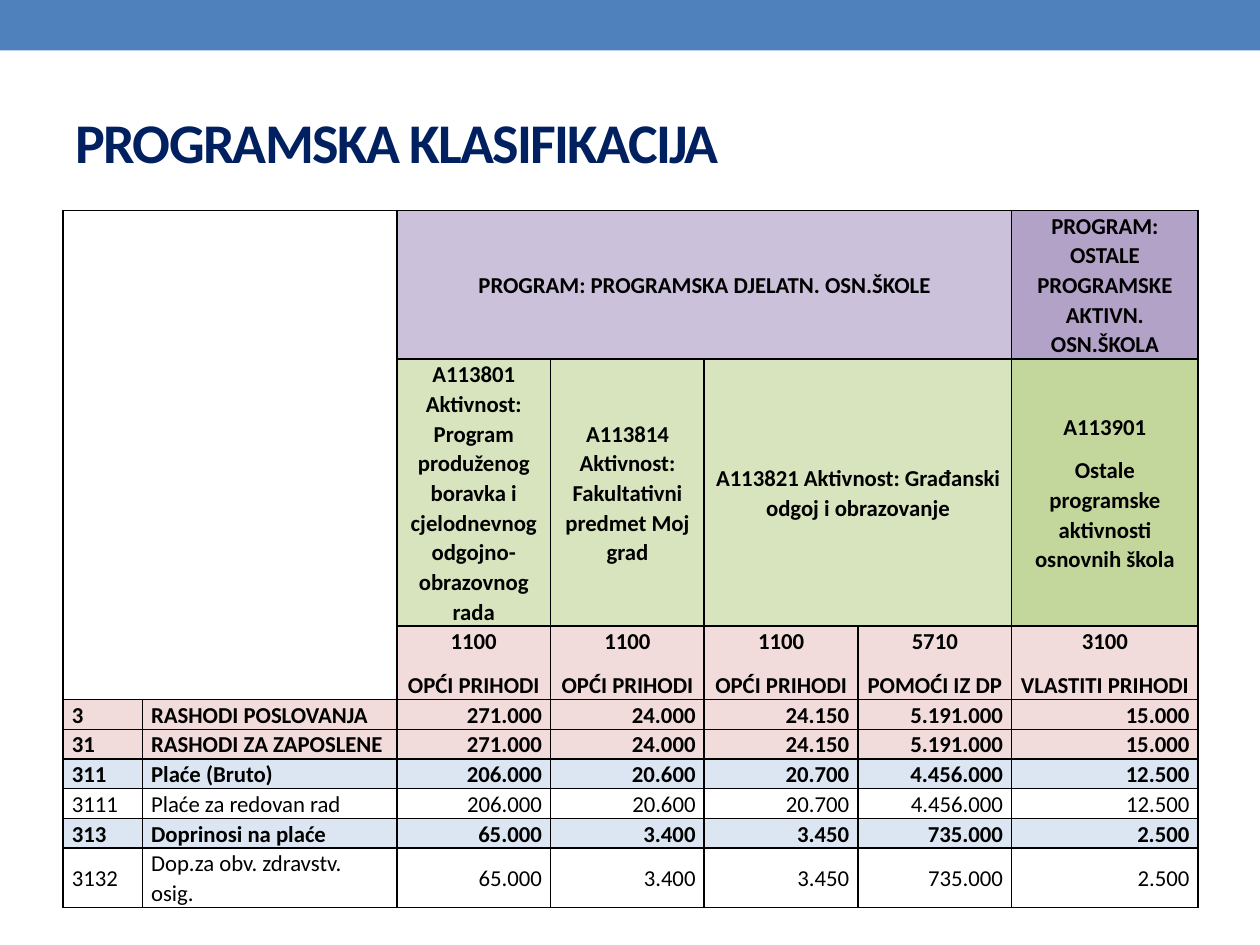
"""Build the slide with the programme classification table."""
from lxml.etree import SubElement
from pptx import Presentation
from pptx.dml.color import RGBColor
from pptx.enum.shapes import MSO_SHAPE as Shape
from pptx.enum.text import MSO_ANCHOR as Anchor, PP_ALIGN as Align
from pptx.oxml.ns import qn
from pptx.util import Inches, Pt

TITLE = "PROGRAMSKA KLASIFIKACIJA"
WIDTHS = [0.63, 2.02, 1.22, 1.22, 1.22, 1.22, 1.48]
HEIGHTS = [1.18, 2.12, 0.58] + [0.23] * 5 + [0.47]
PINK, BLUE, WHITE, GREEN = "F2DCDB", "DCE6F2", "FFFFFF", "D7E4BD"
FUNDS = "OPĆI PRIHODI"

# (column, columns spanned, fill, text)
HEADS = [
    [(2, 4, "CCC1DA", "PROGRAM: PROGRAMSKA DJELATN. OSN.ŠKOLE"),
     (6, 1, "B3A2C7", "PROGRAM: OSTALE PROGRAMSKE AKTIVN. OSN.ŠKOLA")],
    [(2, 1, GREEN, "A113801 Aktivnost: Program produženog boravka i "
                   "cjelodnevnog odgojno-obrazovnog rada"),
     (3, 1, GREEN, "A113814 Aktivnost: Fakultativni predmet Moj grad"),
     (4, 2, GREEN, "A113821 Aktivnost: Građanski odgoj i obrazovanje"),
     (6, 1, "C3D69B", "A113901\nOstale programske aktivnosti osnovnih škola")],
    [(2, 1, PINK, f"1100\n{FUNDS}"),
     (3, 1, PINK, f"1100\n{FUNDS}"),
     (4, 1, PINK, f"1100\n{FUNDS}"),
     (5, 1, PINK, "5710\nPOMOĆI IZ DP"),
     (6, 1, PINK, "3100\nVLASTITI PRIHODI")],
]
ROWS = [
    ("3", "RASHODI POSLOVANJA", "271.000", "24.000", "24.150", "5.191.000", "15.000"),
    ("31", "RASHODI ZA ZAPOSLENE", "271.000", "24.000", "24.150", "5.191.000", "15.000"),
    ("311", "Plaće (Bruto)", "206.000", "20.600", "20.700", "4.456.000", "12.500"),
    ("3111", "Plaće za redovan rad", "206.000", "20.600", "20.700", "4.456.000", "12.500"),
    ("313", "Doprinosi na plaće", "65.000", "3.400", "3.450", "735.000", "2.500"),
    ("3132", "Dop.za obv. zdravstv. osig.", "65.000", "3.400", "3.450", "735.000", "2.500"),
]
LEVELS = {1: PINK, 2: PINK, 3: BLUE, 4: WHITE}


def paint(fill, color):
    """Give a fill or a font one solid colour."""
    fill.solid()
    fill.fore_color.rgb = RGBColor.from_string(color)


def write(frame, text, size=13, color="000000", bold=True, align=Align.LEFT,
          line=None, after=None, track=None):
    """Put text in a frame, one paragraph for each line."""
    frame.text = text
    for para in frame.paragraphs:
        para.alignment = align
        para.line_spacing = line
        para.space_after = after
        for run in para.runs:
            font = run.font
            font.name, font.size, font.bold = "Calibri", Pt(size), bold
            paint(font.fill, color)
            if track is not None:
                font._element.set("spc", str(track * 100))


def edge(cell, sides):
    """Draw black lines on the named sides and none on the rest."""
    props = cell._tc.get_or_add_tcPr()
    for side in "LRTB":
        line = SubElement(props, qn(f"a:ln{side}"), w=str(Pt(1)))
        if side in sides:
            fill = SubElement(line, qn("a:solidFill"))
            SubElement(fill, qn("a:srgbClr"), val="000000")
        else:
            SubElement(line, qn("a:noFill"))


def fill_cell(cell, text, color, **form):
    """Write one table cell on its colour."""
    cell.margin_left = cell.margin_right = Inches(0.07)
    cell.margin_top = cell.margin_bottom = 0
    cell.vertical_anchor = Anchor.MIDDLE
    paint(cell.fill, color)
    write(cell.text_frame, text, line=1.07, after=Pt(8), **form)


def add_grid(slide):
    """Add the table with its heads and amounts."""
    frame = slide.shapes.add_table(
        len(HEIGHTS), len(WIDTHS), Inches(0.5), Inches(1.67),
        Inches(sum(WIDTHS)), Inches(sum(HEIGHTS)))
    grid = frame.table
    grid.first_row = grid.horz_banding = False
    for col, width in zip(grid.columns, WIDTHS):
        col.width = Inches(width)
    for row, height in zip(grid.rows, HEIGHTS):
        row.height = Inches(height)

    last = len(HEADS) - 1
    for r in range(len(HEIGHTS)):
        for c in range(len(WIDTHS)):
            blank = r <= last and c < 2
            ends = {0: "LRT", last: "LRB"}.get(r, "LR")
            edge(grid.cell(r, c), ends if blank else "LRTB")

    for r, heads in enumerate(HEADS):
        for c, span, color, text in [(0, 2, WHITE, "")] + heads:
            cell = grid.cell(r, c)
            if span > 1:
                cell.merge(grid.cell(r, c + span - 1))
            fill_cell(cell, text, color, align=Align.CENTER)

    for r, row in enumerate(ROWS, len(HEADS)):
        level = len(row[0])
        for c, text in enumerate(row):
            fill_cell(grid.cell(r, c), text, LEVELS[level], bold=level < 4,
                      align=Align.LEFT if c < 2 else Align.RIGHT)


def main():
    deck = Presentation()
    deck.slide_width, deck.slide_height = Inches(10), Inches(7.5)
    slide = deck.slides.add_slide(deck.slide_layouts[5])

    band = slide.shapes.add_shape(Shape.RECTANGLE, 0, 0, Inches(10), Inches(0.4))
    band.shadow.inherit = False
    paint(band.fill, "4F81BD")
    band.line.fill.background()

    title = slide.shapes.title
    title.left, title.top = Inches(0.5), Inches(0.58)
    title.width, title.height = Inches(9), Inches(1.08)
    title.text_frame.vertical_anchor = Anchor.MIDDLE
    write(title.text_frame, TITLE, size=32, color="002060", track=-1)

    add_grid(slide)
    deck.save("out.pptx")


if __name__ == "__main__":
    main()
